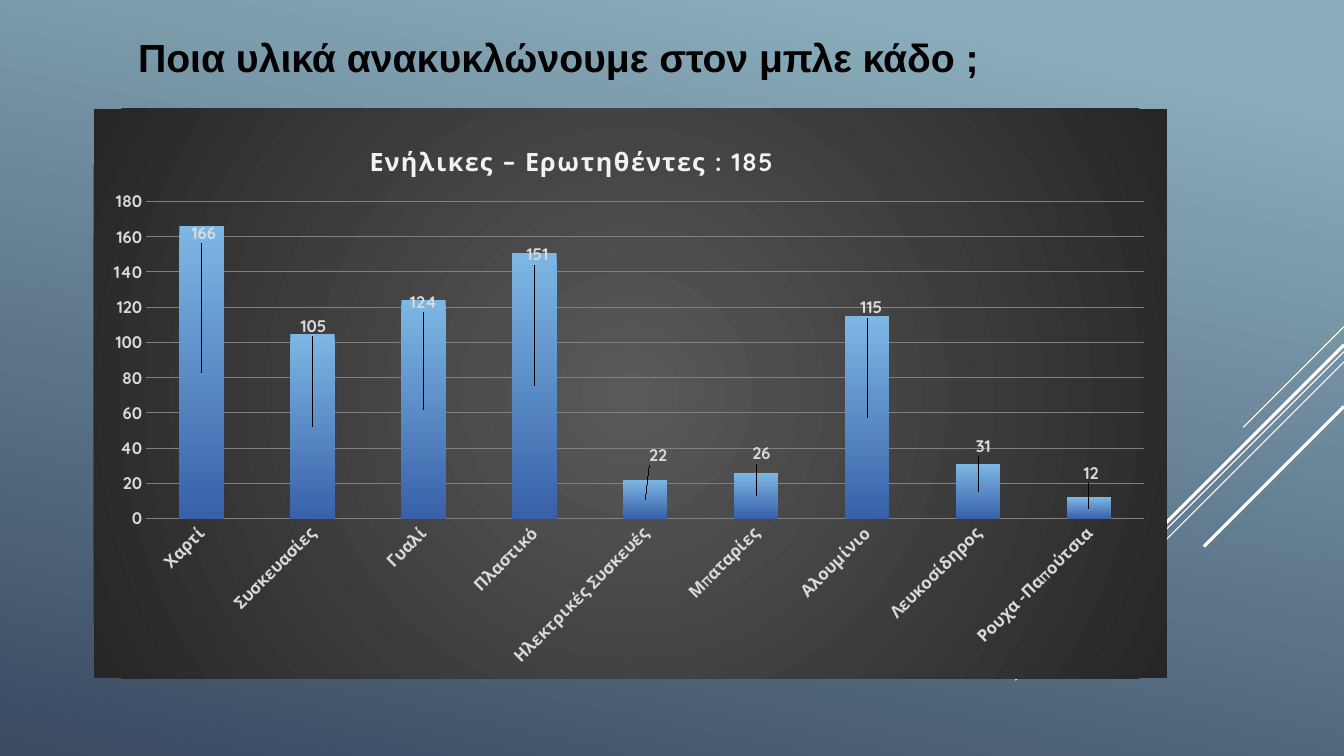
from lxml import etree
from pptx import Presentation
from pptx.chart.data import CategoryChartData
from pptx.dml.color import RGBColor
from pptx.enum.chart import XL_CHART_TYPE, XL_LABEL_POSITION, XL_TICK_MARK
from pptx.enum.shapes import MSO_CONNECTOR
from pptx.oxml import parse_xml
from pptx.oxml.ns import nsdecls, qn
from pptx.util import Cm, Pt

COLUMN_STACKED = XL_CHART_TYPE.COLUMN_STACKED
LABEL_CENTER = XL_LABEL_POSITION.CENTER
NO_TICK = XL_TICK_MARK.NONE
STRAIGHT = MSO_CONNECTOR.STRAIGHT

BLACK = RGBColor(0x00, 0x00, 0x00)
WHITE = RGBColor(0xFF, 0xFF, 0xFF)
OFF_WHITE = RGBColor(0xF2, 0xF2, 0xF2)
LIGHT_GREY = RGBColor(0xD9, 0xD9, 0xD9)
GRID_GREY = RGBColor(0x80, 0x80, 0x80)
PANEL_CENTER = RGBColor(0x59, 0x59, 0x59)
PANEL_EDGE = RGBColor(0x26, 0x26, 0x26)
SKY = RGBColor(0x8A, 0xAC, 0xBB)
NAVY = RGBColor(0x39, 0x4A, 0x61)
BAR_TOP = RGBColor(0x7D, 0xB7, 0xE4)
BAR_BOTTOM = RGBColor(0x39, 0x61, 0xA9)

TITLE_FONT = "Arial"
CHART_FONT = "Quicksand"
SLIDE_WIDTH, SLIDE_HEIGHT = Cm(33.87), Cm(19.05)

# Diagonals from the right edge: start height and run in cm, width in points
DIAGONALS = [
    (8.23, 2.54, 0.75),
    (8.86, 8.28, 0.75),
    (9.12, 5.26, 0.75),
    (8.69, 4.85, 2.25),
    (10.24, 3.53, 2.25),
]

# Material, answers, label shift from the bar centre in percent of the chart
MATERIALS = [
    ("Χαρτί", 166, 0.2, -24.5),
    ("Συσκευασίες", 105, 0.1, -17.6),
    ("Γυαλί", 124, 0, -18.9),
    ("Πλαστικό", 151, 0.3, -23),
    ("Ηλεκτρικές Συσκευές", 22, 1.2, -7.7),
    ("Μπαταρίες", 26, 0.5, -7.4),
    ("Αλουμίνιο", 115, 0.4, -19.3),
    ("Λευκοσίδηρος", 31, 0.5, -8),
    ("Ρουχα -Παπούτσια", 12, 0.2, -6.2),
]


def style_font(font, name=CHART_FONT, size=12, color=LIGHT_GREY, bold=True):
    font.name = name
    font.size = Pt(size)
    font.bold = bold
    font.color.rgb = color


def write_text(text_frame, text, spacing=None, **font_format):
    """Write one run; spacing is the letter spacing in points."""
    run = text_frame.paragraphs[0].add_run()
    run.text = text
    style_font(run.font, **font_format)
    if spacing:
        run.font._element.set("spc", str(spacing * 100))


def fill_gradient(fill, start, end, clockwise_angle, first_position=0):
    fill.gradient()
    fill.gradient_angle = 360 - clockwise_angle
    for stop, color, position in zip(fill.gradient_stops, (start, end), (first_position, 1)):
        stop.color.rgb = color
        stop.position = position


def make_layout(**percents):
    """Return a manual chart layout; a "target" or "mode" key is kept as text."""
    layout = parse_xml(f'<c:layout {nsdecls("c")}><c:manualLayout/></c:layout>')
    for tag, value in percents.items():
        item = etree.SubElement(layout[0], qn(f"c:{tag}"))
        item.set("val", value if isinstance(value, str) else f"{value / 100:.3f}")
    return layout


def add_diagonal(slide, top, run, width):
    line = slide.shapes.add_connector(
        STRAIGHT, SLIDE_WIDTH, Cm(top), SLIDE_WIDTH - Cm(run), Cm(top + run))
    line.line.color.rgb = WHITE
    line.line.width = Pt(width)
    etree.SubElement(line._element.spPr, qn("a:effectLst"))


def add_heading(slide, text):
    text_frame = slide.shapes.add_textbox(Cm(3.23), Cm(0.71), Cm(21.95), Cm(1.45)).text_frame
    text_frame.word_wrap = False
    write_text(text_frame, text, name=TITLE_FONT, size=28, color=BLACK)


def fill_chart_panel(chart):
    """Give the chart area a gradient that spreads from its centre."""
    panel = parse_xml(
        f'<c:spPr {nsdecls("c", "a")}><a:gradFill><a:gsLst>'
        f'<a:gs pos="0"><a:srgbClr val="{PANEL_CENTER}"/></a:gs>'
        f'<a:gs pos="100000"><a:srgbClr val="{PANEL_EDGE}"/></a:gs></a:gsLst>'
        '<a:path path="circle"><a:fillToRect l="50000" t="50000" r="50000" b="50000"/></a:path>'
        '</a:gradFill><a:ln><a:noFill/></a:ln></c:spPr>')
    chart._chartSpace.find(qn("c:chart")).addnext(panel)


def set_chart_title(chart, text):
    chart.has_title = True
    title = chart.chart_title
    write_text(title.text_frame, text, spacing=1, size=18, color=OFF_WHITE)
    for old_layout in title._element.findall(qn("c:layout")):
        title._element.remove(old_layout)
    title._element.find(qn("c:tx")).addnext(
        make_layout(xMode="edge", yMode="edge", x=25.3, y=5.2))


def style_axes(chart):
    for axis in (chart.category_axis, chart.value_axis):
        axis.major_tick_mark = axis.minor_tick_mark = NO_TICK
        axis.format.line.fill.background()
        style_font(axis.tick_labels.font)
    category_text = chart.category_axis._element.find(qn("c:txPr"))
    category_text.find(qn("a:bodyPr")).set("rot", str(-45 * 60000))
    values = chart.value_axis
    values.minimum_scale, values.maximum_scale, values.major_unit = 0, 180, 20
    values.has_major_gridlines = True
    grid = values.major_gridlines.format.line
    grid.color.rgb = GRID_GREY
    grid.width = Pt(0.75)


def place_labels(series):
    labels = series.data_labels
    labels.show_value = True
    style_font(labels.font)
    for index, (_, _, shift_x, shift_y) in enumerate(MATERIALS):
        label = series.points[index].data_label
        style_font(label.font)
        label.position = LABEL_CENTER
    for element, (_, _, shift_x, shift_y) in zip(
            labels._element.findall(qn("c:dLbl")), MATERIALS):
        element.find(qn("c:idx")).addnext(make_layout(x=shift_x, y=shift_y))


def add_materials_chart(slide):
    chart_data = CategoryChartData()
    chart_data.categories = [material[0] for material in MATERIALS]
    chart_data.add_series("Series 1", [material[1] for material in MATERIALS])
    chart = slide.shapes.add_chart(
        COLUMN_STACKED, Cm(2.36), Cm(2.74), Cm(27.05), Cm(14.35), chart_data).chart
    chart.has_legend = False
    style_font(chart.font, size=10, color=WHITE)
    fill_chart_panel(chart)
    set_chart_title(chart, "Ενήλικες – Ερωτηθέντες : 185")
    style_axes(chart)

    plot = chart.plots[0]
    plot.gap_width = 150
    plot.overlap = 100
    plot.vary_by_categories = False
    fill_gradient(plot.series[0].format.fill, BAR_TOP, BAR_BOTTOM, 90)
    place_labels(plot.series[0])

    plot_area = chart._chartSpace.find(qn("c:chart")).find(qn("c:plotArea"))
    for old_layout in plot_area.findall(qn("c:layout")):
        plot_area.remove(old_layout)
    plot_area.insert(0, make_layout(
        layoutTarget="inner", xMode="edge", yMode="edge", x=4.9, y=16.3, w=93, h=55.7))


def main():
    presentation = Presentation()
    presentation.slide_width = SLIDE_WIDTH
    presentation.slide_height = SLIDE_HEIGHT
    slide = presentation.slides.add_slide(presentation.slide_layouts[6])
    fill_gradient(slide.background.fill, SKY, NAVY, 102, first_position=0.1)
    for diagonal in DIAGONALS:
        add_diagonal(slide, *diagonal)
    add_heading(slide, "Ποια υλικά ανακυκλώνουμε στον μπλε κάδο ;")
    add_materials_chart(slide)
    presentation.save("out.pptx")


if __name__ == "__main__":
    main()
